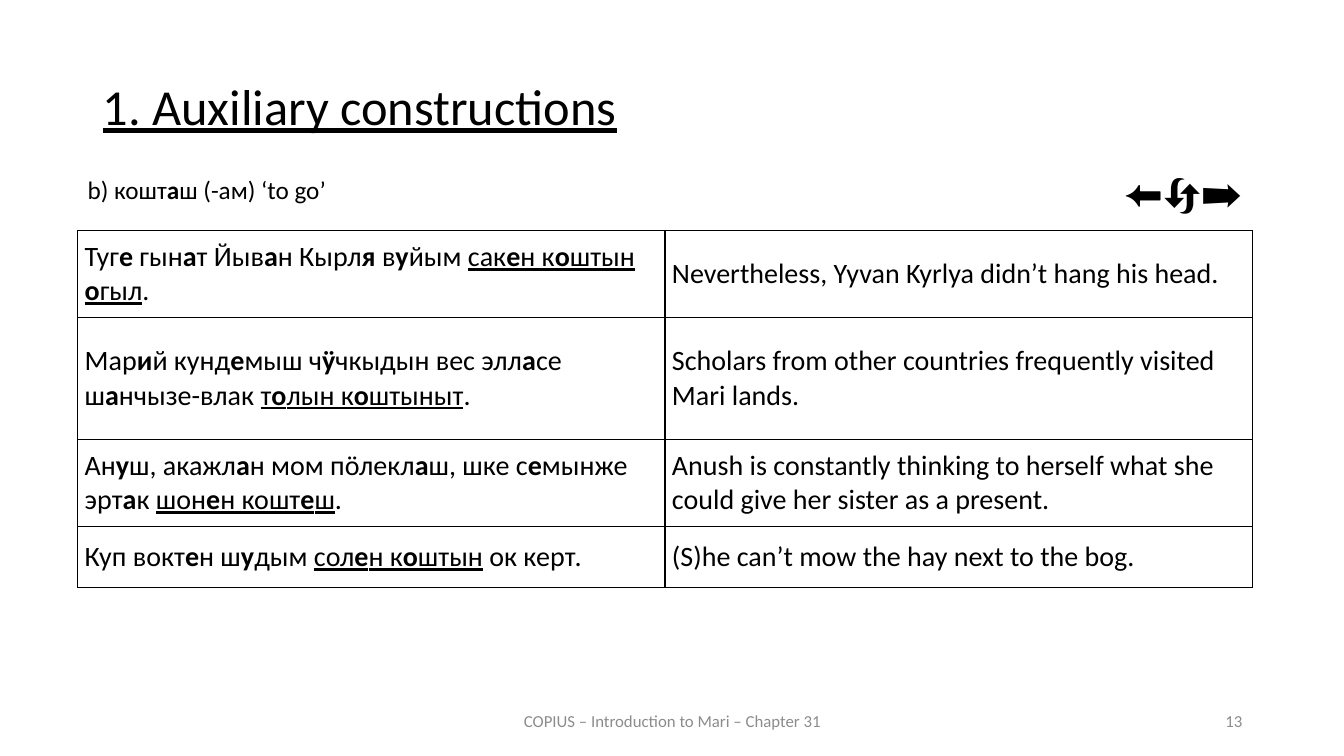
from lxml import etree
from pptx import Presentation
from pptx.dml.color import RGBColor
from pptx.enum.text import MSO_ANCHOR, MSO_AUTO_SIZE, PP_ALIGN
from pptx.oxml.ns import qn
from pptx.util import Inches, Pt

LEFT, CENTER, RIGHT, JUSTIFY = (
    PP_ALIGN.LEFT, PP_ALIGN.CENTER, PP_ALIGN.RIGHT, PP_ALIGN.JUSTIFY)
TOP, MIDDLE = MSO_ANCHOR.TOP, MSO_ANCHOR.MIDDLE
GROW, FIXED = MSO_AUTO_SIZE.SHAPE_TO_FIT_TEXT, MSO_AUTO_SIZE.NONE

FONT = "Calibri"
COLORS = {"ink": "000000", "muted": "8C8C8C"}

# Markup: *bold* for the stressed vowel, _underline_ for the construction
ROWS = [
    (0.86, "Туг*е* гын*а*т Йыв*а*н Кырл*я* в*у*йым _сак*е*н к*о*штын *о*гыл_.",
     "Nevertheless, Yyvan Kyrlya didn’t hang his head."),
    (1.21, "Мар*и*й кунд*е*мыш ч*ӱ*чкыдын вес элл*а*се ш*а*нчызе-влак "
     "_т*о*лын к*о*штыныт_.",
     "Scholars from other countries frequently visited Mari lands."),
    (0.86, "Ан*у*ш, акажл*а*н мом пӧлекл*а*ш, шке с*е*мынже эрт*а*к "
     "_шон*е*н кошт*е*ш_.",
     "Anush is constantly thinking to herself what she could give her "
     "sister as a present."),
    (0.61, "Куп вокт*е*н ш*у*дым _сол*е*н к*о*штын_ ок керт.",
     "(S)he can’t mow the hay next to the bog."),
]


def write(frame, text, size=20, color="ink", align=LEFT, line=None, before=None):
    """Fill a text frame, turning the markup into formatted runs."""
    para = frame.paragraphs[0]
    para.alignment = align
    if line:
        para.line_spacing = line
    if before:
        para.space_before = Pt(before)
    under = False
    for i, part in enumerate(text.split("*")):
        for j, piece in enumerate(part.split("_")):
            if j:
                under = not under
            if not piece:
                continue
            run = para.add_run()
            run.text = piece
            font = run.font
            font.name, font.size = FONT, Pt(size)
            font.bold, font.underline = i % 2 == 1, under
            font.color.rgb = RGBColor.from_string(COLORS[color])


def add_text(slide, box, text, anchor=TOP, fit=FIXED, **style):
    frame = slide.shapes.add_textbox(*map(Inches, box)).text_frame
    frame.word_wrap = True
    frame.auto_size = fit
    frame.vertical_anchor = anchor
    write(frame, text, **style)


def add_border(cell, width=1):
    """Draw all four sides of a cell; lines come before the fill."""
    props = cell._tc.get_or_add_tcPr()
    for i, side in enumerate(("a:lnL", "a:lnR", "a:lnT", "a:lnB")):
        line = etree.Element(qn(side), w=str(Pt(width)))
        fill = etree.SubElement(line, qn("a:solidFill"))
        etree.SubElement(fill, qn("a:srgbClr"), val=COLORS["ink"])
        props.insert(i, line)


def add_grid(slide, left, top, width, rows):
    height = sum(row[0] for row in rows)
    table = slide.shapes.add_table(
        len(rows), 2, *map(Inches, (left, top, width, height))).table
    table.first_row = table.horz_banding = False
    for col in table.columns:
        col.width = Inches(width / 2)
    for i, (tall, *texts) in enumerate(rows):
        table.rows[i].height = Inches(tall)
        for j, text in enumerate(texts):
            cell = table.cell(i, j)
            cell.fill.background()
            cell.vertical_anchor = MIDDLE
            cell.margin_left = cell.margin_right = Inches(0.07)
            cell.margin_top = cell.margin_bottom = 0
            write(cell.text_frame, text)
            add_border(cell)


def main():
    deck = Presentation()
    deck.slide_width, deck.slide_height = Inches(13.33), Inches(7.5)
    slide = deck.slides.add_slide(deck.slide_layouts[6])

    # Heading
    add_text(slide, (0.92, 0.76, 11.5, 0.83), "_1. Auxiliary constructions_",
             size=36, align=JUSTIFY, line=0.9, before=12)

    # Footer and page number
    foot = {"anchor": MIDDLE, "size": 12, "color": "muted"}
    add_text(slide, (4.42, 6.95, 4.5, 0.4),
             "COPIUS – Introduction to Mari – Chapter 31", align=CENTER, **foot)
    add_text(slide, (9.42, 6.95, 3, 0.4), "13", align=RIGHT, **foot)

    # Verb and its examples
    add_text(slide, (0.77, 1.68, 5.32, 0.4), "b) кошт*а*ш (-ам) ‘to go’",
             fit=GROW, size=18)
    add_grid(slide, 0.77, 2.29, 11.65, ROWS)

    # Direction symbols
    add_text(slide, (9.42, 1.62, 3, 0.57), "⬅️🔄➡️",
             fit=GROW, size=28, align=RIGHT)

    deck.save("out.pptx")


if __name__ == "__main__":
    main()
